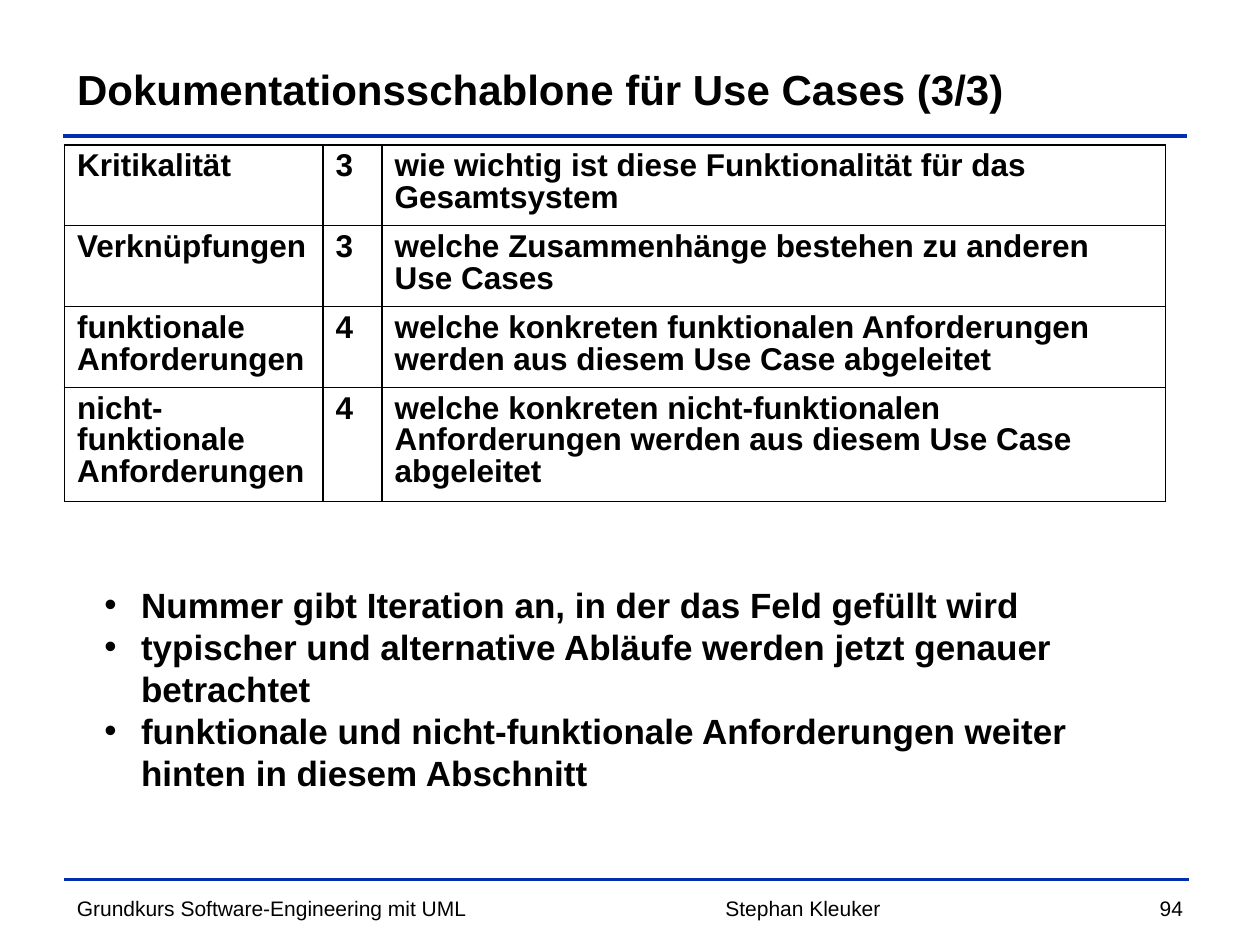
"""Build the slide on the use case documentation template."""
from dataclasses import dataclass

from lxml import etree
from pptx import Presentation
from pptx.dml.color import RGBColor
from pptx.enum import shapes, text
from pptx.oxml import ns
from pptx.util import Cm, Pt


@dataclass(frozen=True)
class Theme:
    font: str = "Arial"
    ink: str = "000000"
    rule: str = "042EAE"
    title: int = 24
    body: int = 20
    cell: int = 18
    foot: int = 12


@dataclass(frozen=True)
class Box:
    left: float
    top: float
    width: float
    height: float

    def place(self) -> tuple:
        return Cm(self.left), Cm(self.top), Cm(self.width), Cm(self.height)


@dataclass(frozen=True)
class Note:
    words: str
    box: Box
    align: text.PP_ALIGN


@dataclass(frozen=True)
class Row:
    field: str
    step: str
    hint: str
    height: float


LOOK = Theme()
LEFT = text.PP_ALIGN.LEFT
HEAD = Box(1.3, 0.71, 22.6, 2.16)
LIST = Box(1.85, 11.63, 21.46, 4.5)
GRID = Box(1.3, 2.92, 22.2, 7.19)
COLS = (5.21, 1.19, 15.8)
RULES = ((1.27, 2.74), (1.3, 17.73))
SPAN = 22.66
ROWS = (
    Row("Kritikalität", "3",
        "wie wichtig ist diese Funktionalität für das Gesamtsystem", 1.63),
    Row("Verknüpfungen", "3",
        "welche Zusammenhänge bestehen zu anderen Use Cases", 1.63),
    Row("funktionale Anforderungen", "4",
        "welche konkreten funktionalen Anforderungen werden aus diesem "
        "Use Case abgeleitet", 1.63),
    Row("nicht-funktionale Anforderungen", "4",
        "welche konkreten nicht-funktionalen Anforderungen werden aus diesem "
        "Use Case abgeleitet", 2.3),
)
POINTS = (
    "Nummer gibt Iteration an, in der das Feld gefüllt wird",
    "typischer und alternative Abläufe werden jetzt genauer betrachtet",
    "funktionale und nicht-funktionale Anforderungen weiter hinten "
    "in diesem Abschnitt",
)
NOTES = (
    Note("Grundkurs Software-Engineering mit UML",
         Box(1.3, 17.93, 8.79, 0.74), LEFT),
    Note("Stephan Kleuker", Box(13.69, 17.93, 5, 0.74), text.PP_ALIGN.CENTER),
    Note("94", Box(18.11, 17.93, 5.99, 0.74), text.PP_ALIGN.RIGHT),
)


def apply(item, **form) -> None:
    """Set each named format value on the item."""
    for name, value in form.items():
        setattr(item, name, value)


def write(para, words: str, size: int, bold: bool = True, **form) -> None:
    """Fill a paragraph with one formatted run."""
    run = para.add_run()
    run.text = words
    apply(run.font, name=LOOK.font, size=Pt(size), bold=bold)
    run.font.color.rgb = RGBColor.from_string(LOOK.ink)
    base = dict(alignment=LEFT, line_spacing=1.0,
                space_before=Pt(0), space_after=Pt(0))
    apply(para, **{**base, **form})


def move(shape, box: Box, anchor: text.MSO_ANCHOR):
    """Place a shape and return its prepared text frame."""
    apply(shape, **dict(zip(("left", "top", "width", "height"), box.place())))
    frame = shape.text_frame
    apply(frame, word_wrap=True, vertical_anchor=anchor,
          auto_size=text.MSO_AUTO_SIZE.NONE)
    return frame


def bullet(para) -> None:
    """Give a paragraph a hanging round bullet."""
    props = para._p.get_or_add_pPr()
    props.set("marL", str(Cm(0.74)))
    props.set("indent", str(-Cm(0.74)))
    etree.SubElement(props, ns.qn("a:buFont"), typeface=LOOK.font)
    etree.SubElement(props, ns.qn("a:buChar"), char="•")


def rule(slide, left: float, top: float) -> None:
    """Draw one blue rule across the slide."""
    line = slide.shapes.add_connector(
        shapes.MSO_CONNECTOR.STRAIGHT,
        Cm(left), Cm(top), Cm(left + SPAN), Cm(top))
    line.line.color.rgb = RGBColor.from_string(LOOK.rule)
    line.line.width = Pt(2)
    etree.SubElement(line._element.spPr, ns.qn("a:effectLst"))


def frame(cell) -> None:
    """Clear the cell fill and outline all four sides."""
    cell.fill.background()
    props = cell._tc.get_or_add_tcPr()
    for spot, side in enumerate(("lnL", "lnR", "lnT", "lnB")):
        edge = etree.Element(ns.qn(f"a:{side}"), w=str(Pt(1)))
        fill = etree.SubElement(edge, ns.qn("a:solidFill"))
        etree.SubElement(fill, ns.qn("a:srgbClr"), val=LOOK.ink)
        props.insert(spot, edge)


def grid(slide) -> None:
    """Build the table of template fields."""
    table = slide.shapes.add_table(len(ROWS), len(COLS), *GRID.place()).table
    apply(table, first_row=False, horz_banding=False)
    for col, width in zip(table.columns, COLS):
        col.width = Cm(width)
    for line, row in zip(table.rows, ROWS):
        line.height = Cm(row.height)
        for cell, words in zip(line.cells, (row.field, row.step, row.hint)):
            write(cell.text_frame.paragraphs[0], words, LOOK.cell,
                  line_spacing=0.9)
            frame(cell)


def main() -> None:
    """Assemble and save the slide."""
    deck = Presentation()
    apply(deck, slide_width=Cm(25.4), slide_height=Cm(19.05))
    slide = deck.slides.add_slide(deck.slide_layouts[1])
    for spot in RULES:
        rule(slide, *spot)
    for note in NOTES:
        shape = slide.shapes.add_textbox(*note.box.place())
        area = move(shape, note.box, text.MSO_ANCHOR.TOP)
        write(area.paragraphs[0], note.words, LOOK.foot, False,
              alignment=note.align)
    area = move(slide.shapes.title, HEAD, text.MSO_ANCHOR.MIDDLE)
    write(area.paragraphs[0], "Dokumentationsschablone für Use Cases (3/3)",
          LOOK.title)
    grid(slide)
    area = move(slide.placeholders[1], LIST, text.MSO_ANCHOR.TOP)
    for spot, words in enumerate(POINTS):
        para = area.add_paragraph() if spot else area.paragraphs[0]
        write(para, words, LOOK.body)
        bullet(para)
    deck.save("out.pptx")


if __name__ == "__main__":
    main()
